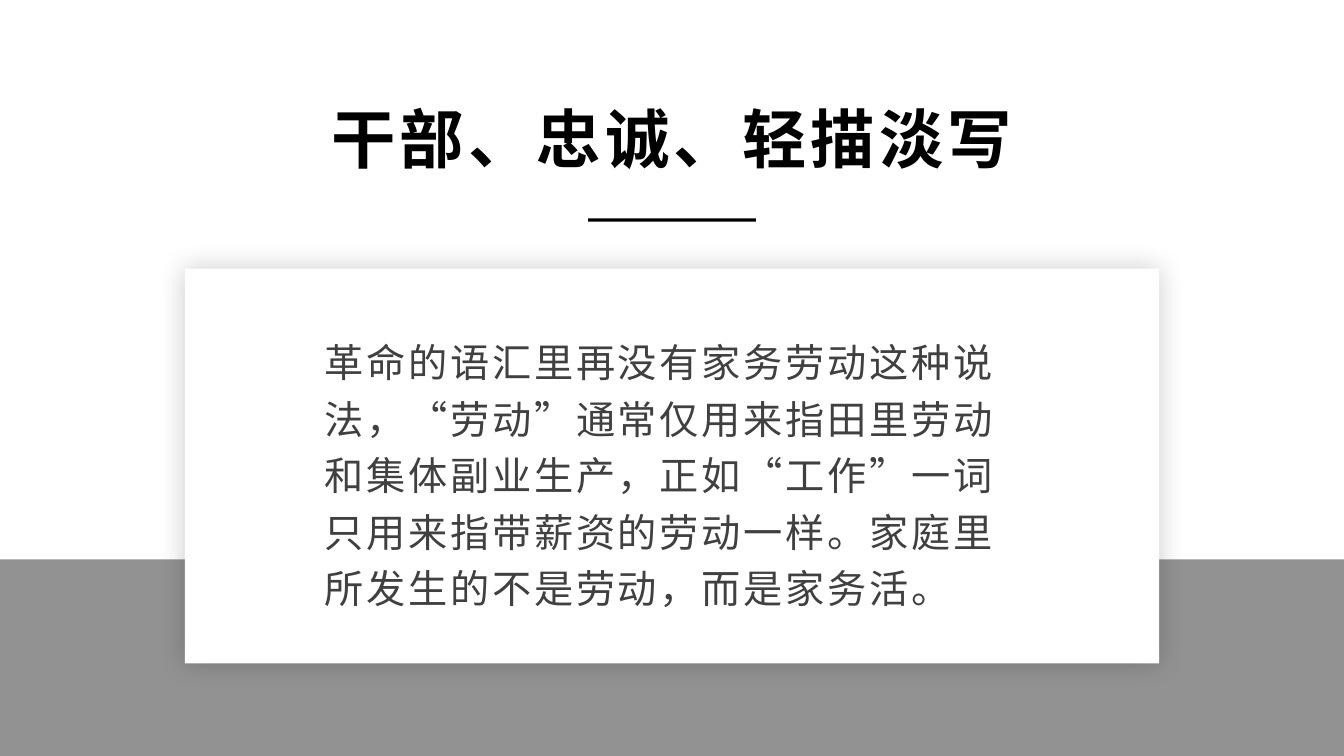
import dataclasses

import lxml.etree
import pptx
import pptx.dml.color
import pptx.enum.shapes
import pptx.enum.text
import pptx.oxml.ns
import pptx.util

Pt = pptx.util.Pt
qn = pptx.oxml.ns.qn


@dataclasses.dataclass(frozen=True)
class Theme:
    font: str = "Noto Sans CJK SC"
    white: str = "FFFFFF"
    black: str = "000000"
    band: str = "929292"
    body: str = "404040"
    title_size: int = 46
    body_size: int = 28


THEME = Theme()
PAGE_WIDTH, PAGE_HEIGHT = 960, 540
CARD_WIDTH = 696
CARD_LEFT = (PAGE_WIDTH - CARD_WIDTH) / 2
RULE_WIDTH = 120
BAND_TOP = 399.6


def rgb(color):
    return pptx.dml.color.RGBColor.from_string(color)


def add_block(page, left, top, width, height, color):
    """Add a plain filled rectangle without outline or shadow."""
    block = page.shapes.add_shape(
        pptx.enum.shapes.MSO_SHAPE.RECTANGLE, Pt(left), Pt(top), Pt(width), Pt(height))
    block.shadow.inherit = False
    block.fill.solid()
    block.fill.fore_color.rgb = rgb(color)
    block.line.fill.background()
    return block


def add_glow_shadow(block, color, blur, opacity):
    """Surround a block with a soft, centred shadow."""
    effects = block.element.spPr.find(qn("a:effectLst"))
    shadow = lxml.etree.SubElement(
        effects, qn("a:outerShdw"), blurRad=str(Pt(blur)), dist="0", dir="0",
        algn="ctr", rotWithShape="0")
    tint = lxml.etree.SubElement(shadow, qn("a:srgbClr"), val=color)
    lxml.etree.SubElement(tint, qn("a:alpha"), val=str(opacity * 1000))


def prepare_frame(box):
    """Set wrapping, insets and middle anchoring; return the first paragraph."""
    frame = box.text_frame
    frame.word_wrap = True
    frame.auto_size = pptx.enum.text.MSO_AUTO_SIZE.NONE
    frame.vertical_anchor = pptx.enum.text.MSO_ANCHOR.MIDDLE
    frame.margin_left = frame.margin_right = Pt(5)
    frame.margin_top = frame.margin_bottom = Pt(2.5)
    return frame.paragraphs[0]


def add_span(para, text, size, color, spacing, bold=False):
    """Add one run with letter spacing in points."""
    span = para.add_run()
    span.text = text
    span.font.name = THEME.font
    span.font.size = Pt(size)
    span.font.bold = bold
    span.font.color.rgb = rgb(color)
    properties = span.font._element
    properties.set("spc", str(spacing * 100))
    lxml.etree.SubElement(properties, qn("a:ea"), typeface=THEME.font)


def set_title(page, text):
    title = page.shapes.title
    title.left, title.top = Pt(CARD_LEFT), Pt(72)
    title.width, title.height = Pt(CARD_WIDTH), Pt(60)
    para = prepare_frame(title)
    para.alignment = pptx.enum.text.PP_ALIGN.CENTER
    para.line_spacing = 0.9
    add_span(para, text, THEME.title_size, THEME.black, spacing=3, bold=True)


def add_body(page, text):
    box = page.shapes.add_textbox(Pt(226.8), Pt(228), Pt(507), Pt(216))
    para = prepare_frame(box)
    para.alignment = pptx.enum.text.PP_ALIGN.LEFT
    para.line_spacing = 1.2
    para.space_after = Pt(8)
    add_span(para, text, THEME.body_size, THEME.body, spacing=2)


def main():
    deck = pptx.Presentation()
    deck.slide_width, deck.slide_height = Pt(PAGE_WIDTH), Pt(PAGE_HEIGHT)
    page = deck.slides.add_slide(deck.slide_layouts.get_by_name("Title Only"))
    page.background.fill.solid()
    page.background.fill.fore_color.rgb = rgb(THEME.white)

    # Bottom band and raised card
    add_block(page, 0, BAND_TOP, PAGE_WIDTH, PAGE_HEIGHT - BAND_TOP, THEME.band)
    card = add_block(page, CARD_LEFT, 192, CARD_WIDTH, 282, THEME.white)
    add_glow_shadow(card, THEME.black, blur=20, opacity=20)

    # Title with the rule below it
    set_title(page, "干部、忠诚、轻描淡写")
    add_block(page, (PAGE_WIDTH - RULE_WIDTH) / 2, 156, RULE_WIDTH, 2.4, THEME.black)

    # Card text
    add_body(page, "革命的语汇里再没有家务劳动这种说法，“劳动”通常仅用来指田里劳动"
                   "和集体副业生产，正如“工作”一词只用来指带薪资的劳动一样。"
                   "家庭里所发生的不是劳动，而是家务活。")

    deck.save("out.pptx")


if __name__ == "__main__":
    main()
